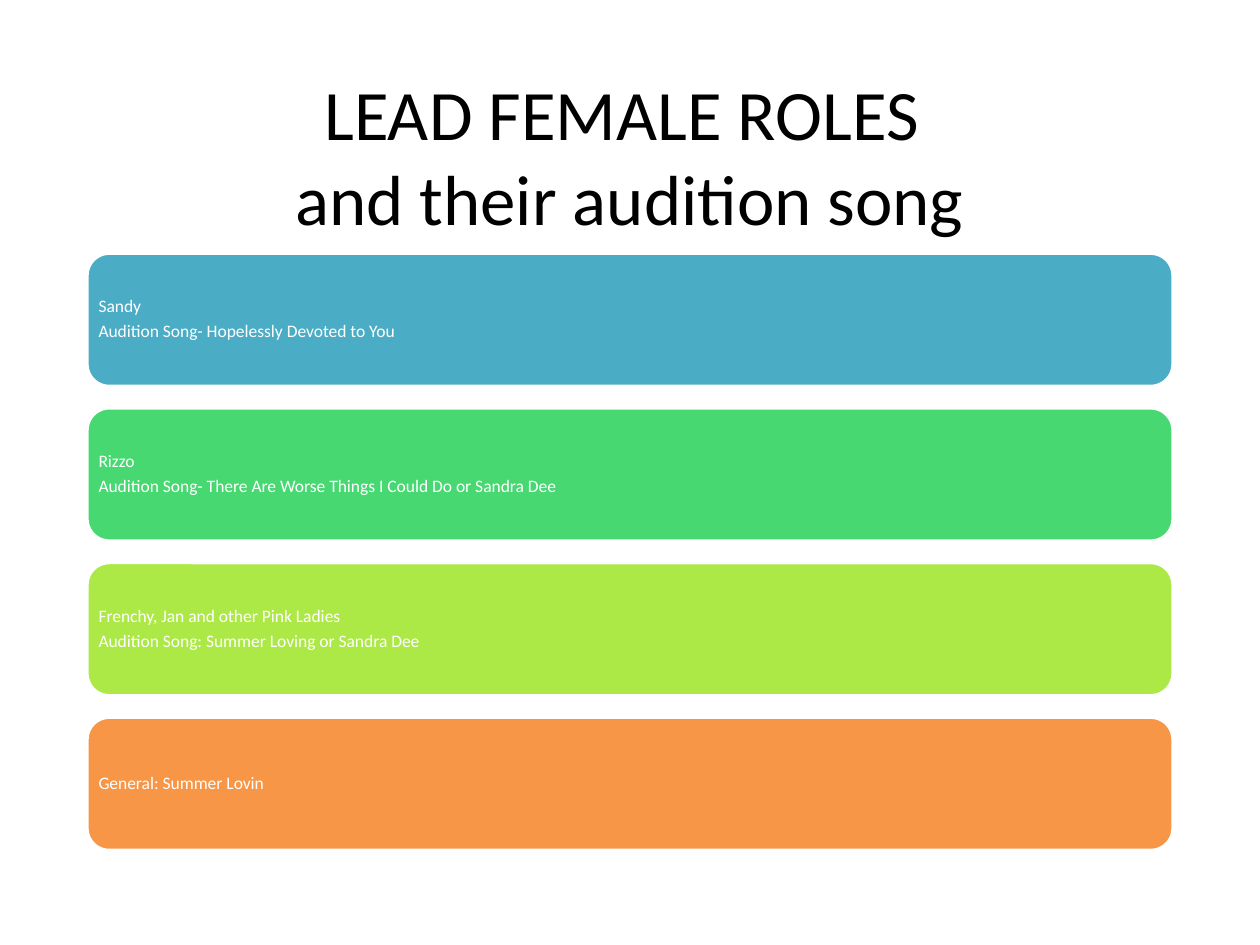
from pptx import Presentation
from pptx.dml.color import RGBColor
from pptx.enum.shapes import MSO_SHAPE
from pptx.enum.text import MSO_ANCHOR, PP_ALIGN
from pptx.util import Inches, Pt

ROUNDED = MSO_SHAPE.ROUNDED_RECTANGLE
MIDDLE = MSO_ANCHOR.MIDDLE
LEFT, CENTER = PP_ALIGN.LEFT, PP_ALIGN.CENTER

COLORS = {
    "black": "000000",
    "white": "FFFFFF",
    "blue": "4BACC6",
    "green": "47D872",
    "lime": "ACE946",
    "orange": "F79646",
}
ROLES = [
    ("blue", ["Sandy", "Audition Song- Hopelessly Devoted to You"]),
    ("green", ["Rizzo",
               "Audition Song- There Are Worse Things I Could Do or Sandra Dee"]),
    ("lime", ["Frenchy, Jan and other Pink Ladies",
              "Audition Song: Summer Loving or Sandra Dee"]),
    ("orange", ["General: Summer Lovin"]),
]


def rgb(name):
    return RGBColor.from_string(COLORS[name])


def write_text(frame, paragraphs, size, color, align=LEFT, line_spacing=1.0,
               space_after=0, inset_x=0.1, inset_y=0.05):
    frame.word_wrap = True
    frame.vertical_anchor = MIDDLE
    frame.margin_left = frame.margin_right = Inches(inset_x)
    frame.margin_top = frame.margin_bottom = Inches(inset_y)
    for index, words in enumerate(paragraphs):
        paragraph = frame.add_paragraph() if index else frame.paragraphs[0]
        paragraph.text = words
        paragraph.alignment = align
        paragraph.line_spacing = line_spacing
        paragraph.space_after = Pt(space_after)
        for run in paragraph.runs:
            run.font.name = "Calibri"
            run.font.size = Pt(size)
            run.font.color.rgb = rgb(color)


def add_title(slide, left, top, width, height):
    title = slide.shapes.add_textbox(
        Inches(left), Inches(top), Inches(width), Inches(height))
    write_text(title.text_frame, ["LEAD FEMALE ROLES \nand their audition song"],
               size=40.5, color="black", align=CENTER)


def add_role_bars(slide, left, top, width, height, gap=0.17):
    """Stack one bar per role, with equal gaps, in the given box."""
    bar_height = (height - gap * (len(ROLES) - 1)) / len(ROLES)
    for index, (color, lines) in enumerate(ROLES):
        bar = slide.shapes.add_shape(
            ROUNDED, Inches(left), Inches(top + index * (bar_height + gap)),
            Inches(width), Inches(bar_height))
        bar.shadow.inherit = False
        bar.fill.solid()
        bar.fill.fore_color.rgb = rgb(color)
        bar.line.color.rgb = rgb("white")
        bar.line.width = Pt(2)
        write_text(bar.text_frame, lines, size=10, color="white",
                   line_spacing=0.9, space_after=3.5,
                   inset_x=0.04, inset_y=0.04)


def main():
    deck = Presentation()
    deck.slide_width, deck.slide_height = Inches(10), Inches(7.5)
    slide = deck.slides.add_slide(deck.slide_layouts[6])
    add_title(slide, 0.69, 0.61, 8.62, 1.24)
    add_role_bars(slide, 0.69, 2.01, 8.62, 4.74)
    deck.save("out.pptx")


if __name__ == "__main__":
    main()
